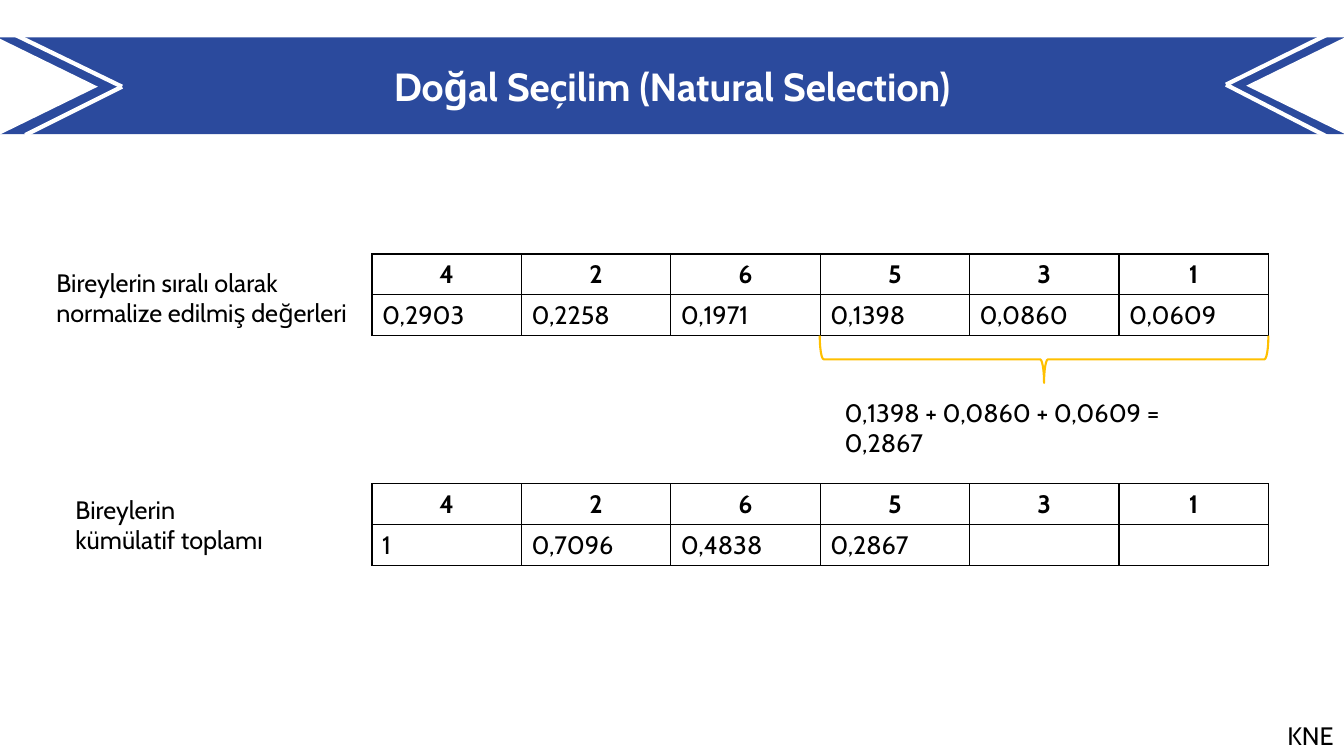
"""Build the natural selection slide with its two value tables."""
from lxml.etree import SubElement
from pptx import Presentation
from pptx.dml.color import RGBColor
from pptx.enum.shapes import MSO_CONNECTOR, MSO_SHAPE
from pptx.enum.text import MSO_ANCHOR, MSO_AUTO_SIZE, PP_ALIGN
from pptx.oxml.ns import qn
from pptx.util import Inches, Pt

FONT = "Cabin"
COLORS = {"banner": "2B4A9D", "white": "FFFFFF", "black": "000000", "brace": "FFC000"}
INDIVIDUALS = ["4", "2", "6", "5", "3", "1"]
NORMALIZED = ["0,2903", "0,2258", "0,1971", "0,1398", "0,0860", "0,0609"]
CUMULATIVE = ["1", "0,7096", "0,4838", "0,2867", "", ""]


def rgb(name):
    return RGBColor.from_string(COLORS[name])


def add_run(p, text, size=18, color="black", bold=False):
    r = p.add_run()
    r.text = text
    r.font.name = FONT
    r.font.size = Pt(size)
    r.font.bold = bold
    r.font.color.rgb = rgb(color)


def set_title(slide, text):
    sp = slide.shapes.title
    sp.left, sp.top, sp.width, sp.height = map(Inches, (0, 0.37, 13.33, 0.96))
    sp.fill.solid()
    sp.fill.fore_color.rgb = rgb("banner")
    tf = sp.text_frame
    tf.auto_size = MSO_AUTO_SIZE.NONE
    tf.vertical_anchor = MSO_ANCHOR.MIDDLE
    p = tf.paragraphs[0]
    p.alignment = PP_ALIGN.CENTER
    add_run(p, text, 28, "white", True)


def add_text(slide, box, lines, wrap=True):
    tf = slide.shapes.add_textbox(*map(Inches, box)).text_frame
    tf.word_wrap = wrap
    tf.auto_size = MSO_AUTO_SIZE.SHAPE_TO_FIT_TEXT
    for i, line in enumerate(lines):
        p = tf.add_paragraph() if i else tf.paragraphs[0]
        add_run(p, line)


def add_notch(slide, box, rotation):
    sp = slide.shapes.add_shape(MSO_SHAPE.ISOSCELES_TRIANGLE, *map(Inches, box))
    sp.rotation = rotation
    sp.shadow.inherit = False
    sp.fill.solid()
    sp.fill.fore_color.rgb = rgb("white")
    sp.line.fill.background()


def add_stripe(slide, start, end):
    line = slide.shapes.add_connector(MSO_CONNECTOR.STRAIGHT, *map(Inches, start + end))
    line.line.color.rgb = rgb("white")
    line.line.width = Pt(3)
    SubElement(line._element.spPr, qn("a:effectLst"))


def add_brace(slide, box):
    sp = slide.shapes.add_shape(MSO_SHAPE.RIGHT_BRACE, *map(Inches, box))
    sp.rotation = 90
    sp.shadow.inherit = False
    sp.fill.background()
    sp.line.color.rgb = rgb("brace")
    sp.line.width = Pt(1.5)


def add_borders(cell):
    tcPr = cell._tc.get_or_add_tcPr()
    for side in ("a:lnL", "a:lnR", "a:lnT", "a:lnB"):
        ln = SubElement(tcPr, qn(side), w=str(Pt(1)))
        fill = SubElement(ln, qn("a:solidFill"))
        SubElement(fill, qn("a:srgbClr"), val=COLORS["black"])


def add_values(slide, top, values):
    rows = [INDIVIDUALS, values]
    table = slide.shapes.add_table(
        len(rows), len(INDIVIDUALS), Inches(3.69), Inches(top), Inches(8.89), Inches(0.81)
    ).table
    table.horz_banding = False
    for i, row in enumerate(rows):
        for j, text in enumerate(row):
            cell = table.cell(i, j)
            add_borders(cell)
            cell.fill.background()
            p = cell.text_frame.paragraphs[0]
            p.alignment = PP_ALIGN.LEFT if i else PP_ALIGN.CENTER
            if text:
                add_run(p, text, bold=i == 0)


def main():
    prs = Presentation()
    prs.slide_width, prs.slide_height = Inches(13.33), Inches(7.5)
    slide = prs.slides.add_slide(prs.slide_layouts[5])

    set_title(slide, "Doğal Seçilim (Natural Selection)")
    add_notch(slide, (0, 0.37, 0.96, 0.98), 90)
    add_stripe(slide, (0.16, 0.35), (1.21, 0.86))
    add_stripe(slide, (0.25, 1.34), (1.21, 0.86))
    add_notch(slide, (12.37, 0.36, 0.96, 0.98), 270)
    add_stripe(slide, (12.16, 0.84), (13.15, 0.35))
    add_stripe(slide, (13.17, 1.36), (12.16, 0.84))

    add_text(slide, (0.46, 2.6, 3.19, 0.71),
             ["Bireylerin sıralı olarak normalize edilmiş değerleri"])
    add_values(slide, 2.52, NORMALIZED)
    add_brace(slide, (10.12, 1.34, 0.47, 4.45))
    add_text(slide, (8.28, 3.89, 4.14, 0.4), ["0,1398 + 0,0860 + 0,0609 = 0,2867"])

    add_text(slide, (0.65, 4.85, 2.13, 0.71), ["Bireylerin", "kümülatif toplamı"])
    add_values(slide, 4.8, CUMULATIVE)
    add_text(slide, (12.67, 7.1, 0.66, 0.4), ["KNE"], wrap=False)

    prs.save("out.pptx")


if __name__ == "__main__":
    main()
